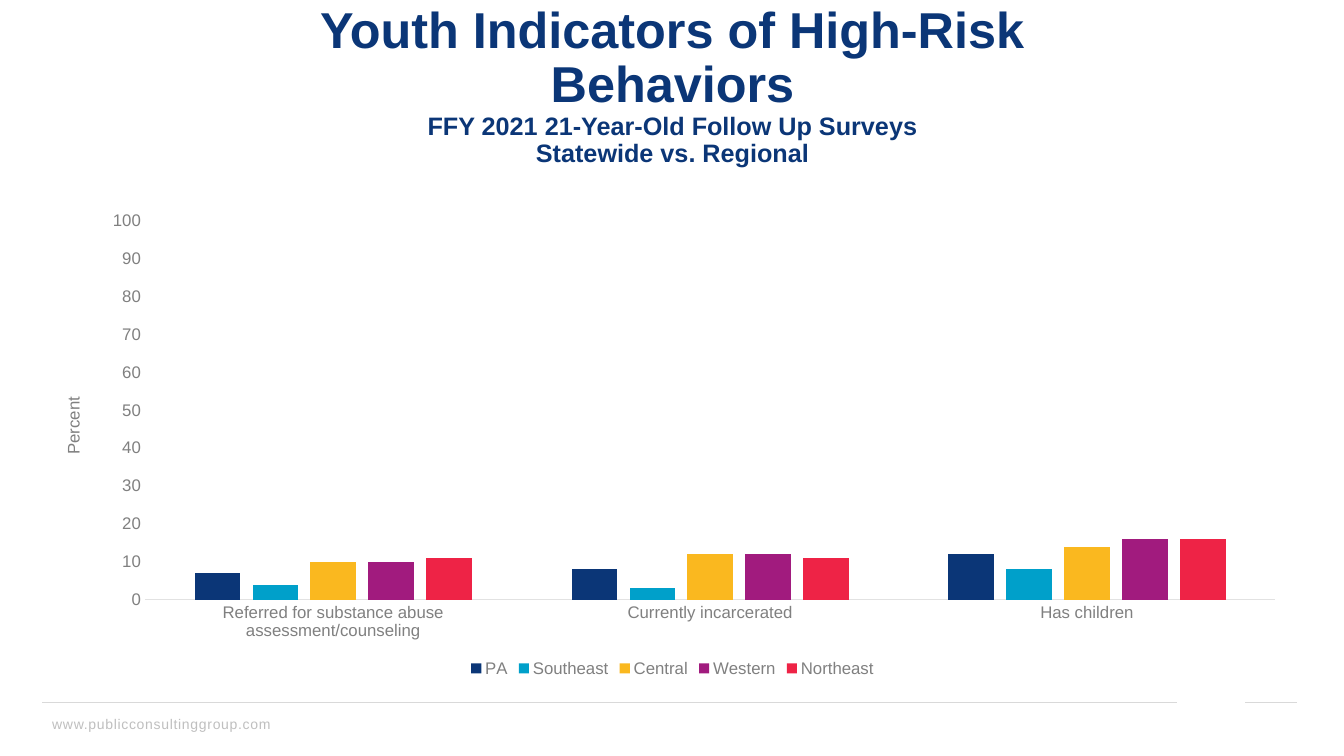
"""Build the slide on youth indicators of high-risk behaviors."""
from copy import deepcopy

from lxml import etree
from pptx import Presentation
from pptx.chart.data import CategoryChartData
from pptx.dml.color import RGBColor
from pptx.enum.chart import XL_CHART_TYPE, XL_LEGEND_POSITION, XL_TICK_MARK
from pptx.enum.shapes import MSO_CONNECTOR
from pptx.enum.text import MSO_ANCHOR, PP_ALIGN
from pptx.oxml import parse_xml
from pptx.oxml.ns import nsdecls, qn
from pptx.util import Inches, Pt

COLUMNS = XL_CHART_TYPE.COLUMN_CLUSTERED
BOTTOM = XL_LEGEND_POSITION.BOTTOM
NO_TICK = XL_TICK_MARK.NONE
STRAIGHT = MSO_CONNECTOR.STRAIGHT
MIDDLE = MSO_ANCHOR.MIDDLE
CENTER = PP_ALIGN.CENTER

TITLE = [
    ("Youth Indicators of High-Risk", "title"),
    ("Behaviors", "title"),
    ("FFY 2021 21-Year-Old Follow Up Surveys", "subtitle"),
    ("Statewide vs. Regional", "subtitle"),
]
FOOTER = "www.publicconsultinggroup.com"
VALUE_TITLE = "Percent"
CATEGORIES = [
    "Referred for substance abuse assessment/counseling",
    "Currently incarcerated",
    "Has children",
]
SERIES = [
    ("PA", (7, 8, 12), "0B3677"),
    ("Southeast", (4, 3, 8), "00A0CA"),
    ("Central", (10, 12, 14), "FAB81F"),
    ("Western", (10, 12, 16), "A11B7E"),
    ("Northeast", (11, 11, 16), "EE2346"),
]

THEME = {
    "title": {"name": "Arial", "size": Pt(36), "bold": True, "color": "0B3677"},
    "subtitle": {"name": "Arial", "size": Pt(18), "bold": True, "color": "0B3677"},
    "footer": {"name": "Arial", "size": Pt(10), "color": "BFBFBF"},
    "chart": {"name": "Arial", "size": Pt(10), "color": "3B3B3B"},
    "label": {"name": "Arial", "size": Pt(12), "bold": False, "color": "808080"},
    "axis": "E2E2E2",
    "rule": "D9D9D9",
}

WIDTH, HEIGHT = 13.33, 7.5
LEFT, BODY_WIDTH = 0.44, 12.46
TITLE_BOX = (LEFT, 0.4, BODY_WIDTH, 1.45)
CHART_BOX = (LEFT, 2, BODY_WIDTH, 4.76)
FOOTER_BOX = (0.42, 7.05, 3.87, 0.28)
RULE_Y = 6.97
RULES = [(0.42, 11.67), (12.35, 12.86)]
PLOT = {"x": 0.08, "y": 0.04, "w": 0.9, "h": 0.79}


def box(values):
    return [Inches(v) for v in values]


def style(font, key):
    for name, value in THEME[key].items():
        if name == "color":
            font.color.rgb = RGBColor.from_string(value)
        else:
            setattr(font, name, value)


def add_title(slide):
    sp = slide.shapes.title
    sp.left, sp.top, sp.width, sp.height = box(TITLE_BOX)
    tf = sp.text_frame
    tf.vertical_anchor = MIDDLE
    tf.margin_bottom = Inches(0.59)
    p = tf.paragraphs[0]
    p.alignment, p.line_spacing = CENTER, 0.9
    for i, (text, key) in enumerate(TITLE):
        r = p.add_run()
        r.text = text
        style(r.font, key)
        if i < len(TITLE) - 1:
            p.add_line_break()
            p._p[-1].append(deepcopy(r._r.rPr))


def add_footer(slide):
    tf = slide.shapes.add_textbox(*box(FOOTER_BOX)).text_frame
    tf.word_wrap = True
    r = tf.paragraphs[0].add_run()
    r.text = FOOTER
    style(r.font, "footer")
    r._r.rPr.set("spc", "50")
    for start, end in RULES:
        line = slide.shapes.add_connector(STRAIGHT, *box((start, RULE_Y, end, RULE_Y)))
        line.line.color.rgb = RGBColor.from_string(THEME["rule"])
        line.line.width = Pt(0.5)
        etree.SubElement(line._element.spPr, qn("a:effectLst"))


def set_plot_area(chart):
    area = chart._chartSpace.chart.plotArea
    for old in area.findall(qn("c:layout")):
        area.remove(old)
    modes = '<c:layoutTarget val="inner"/><c:xMode val="edge"/><c:yMode val="edge"/>'
    sizes = "".join(f'<c:{k} val="{v}"/>' for k, v in PLOT.items())
    area.insert(0, parse_xml(
        f'<c:layout {nsdecls("c")}><c:manualLayout>{modes}{sizes}'
        "</c:manualLayout></c:layout>"))


def add_chart(slide):
    data = CategoryChartData(number_format="0")
    data.categories = CATEGORIES
    for name, values, _ in SERIES:
        data.add_series(name, values)
    chart = slide.shapes.add_chart(COLUMNS, *box(CHART_BOX), data).chart
    style(chart.font, "chart")
    chart.has_title = False
    chart.has_legend = True
    chart.legend.position = BOTTOM
    chart.legend.include_in_layout = False
    style(chart.legend.font, "label")

    plot = chart.plots[0]
    plot.gap_width, plot.overlap, plot.vary_by_categories = 219, -27, False
    for series, (_, _, color) in zip(plot.series, SERIES):
        series.format.fill.solid()
        series.format.fill.fore_color.rgb = RGBColor.from_string(color)

    cat, val = chart.category_axis, chart.value_axis
    for axis in (cat, val):
        axis.major_tick_mark = axis.minor_tick_mark = NO_TICK
        axis.has_major_gridlines = False
        style(axis.tick_labels.font, "label")
    cat.format.line.color.rgb = RGBColor.from_string(THEME["axis"])
    cat.format.line.width = Pt(0.75)
    val.format.line.fill.background()
    val.minimum_scale, val.maximum_scale, val.major_unit = 0, 100, 10
    r = val.axis_title.text_frame.paragraphs[0].add_run()
    r.text = VALUE_TITLE
    style(r.font, "label")
    set_plot_area(chart)


def main():
    prs = Presentation()
    prs.slide_width, prs.slide_height = Inches(WIDTH), Inches(HEIGHT)
    slide = prs.slides.add_slide(prs.slide_layouts[5])
    add_footer(slide)
    add_title(slide)
    add_chart(slide)
    prs.save("out.pptx")


if __name__ == "__main__":
    main()
